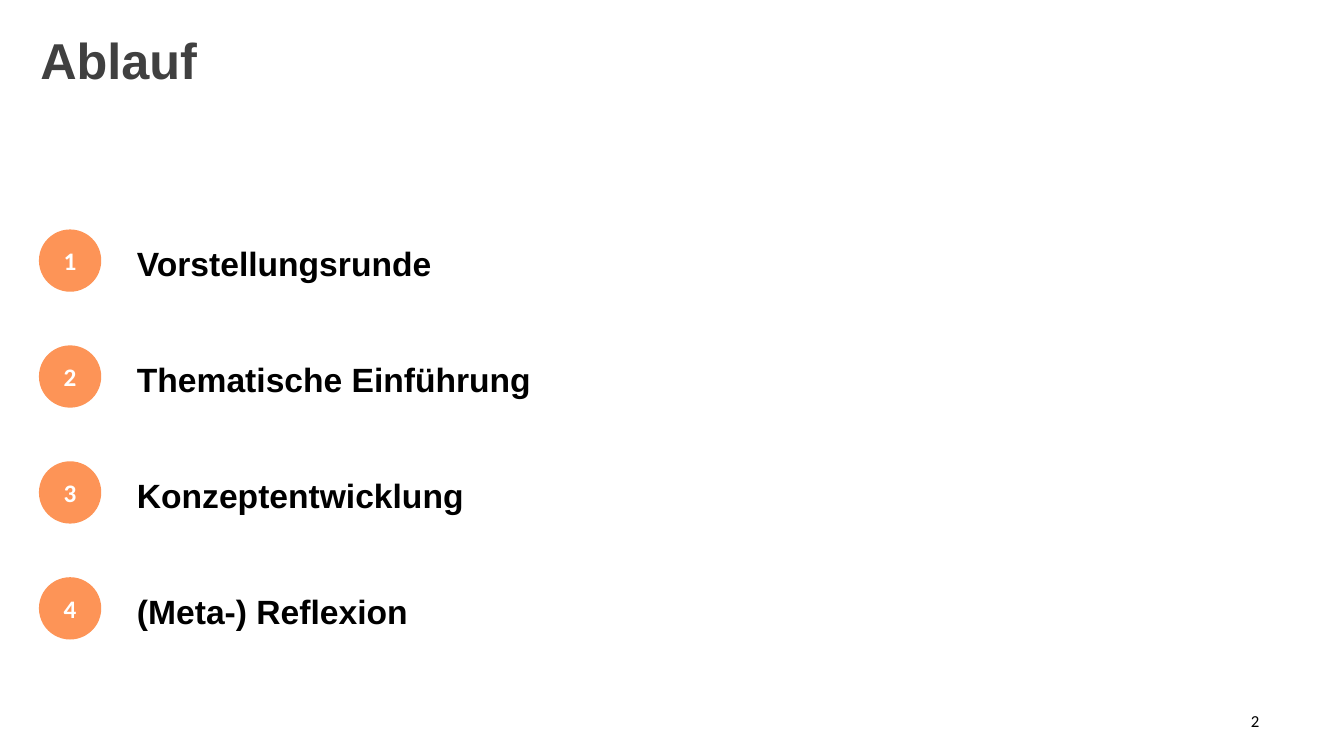
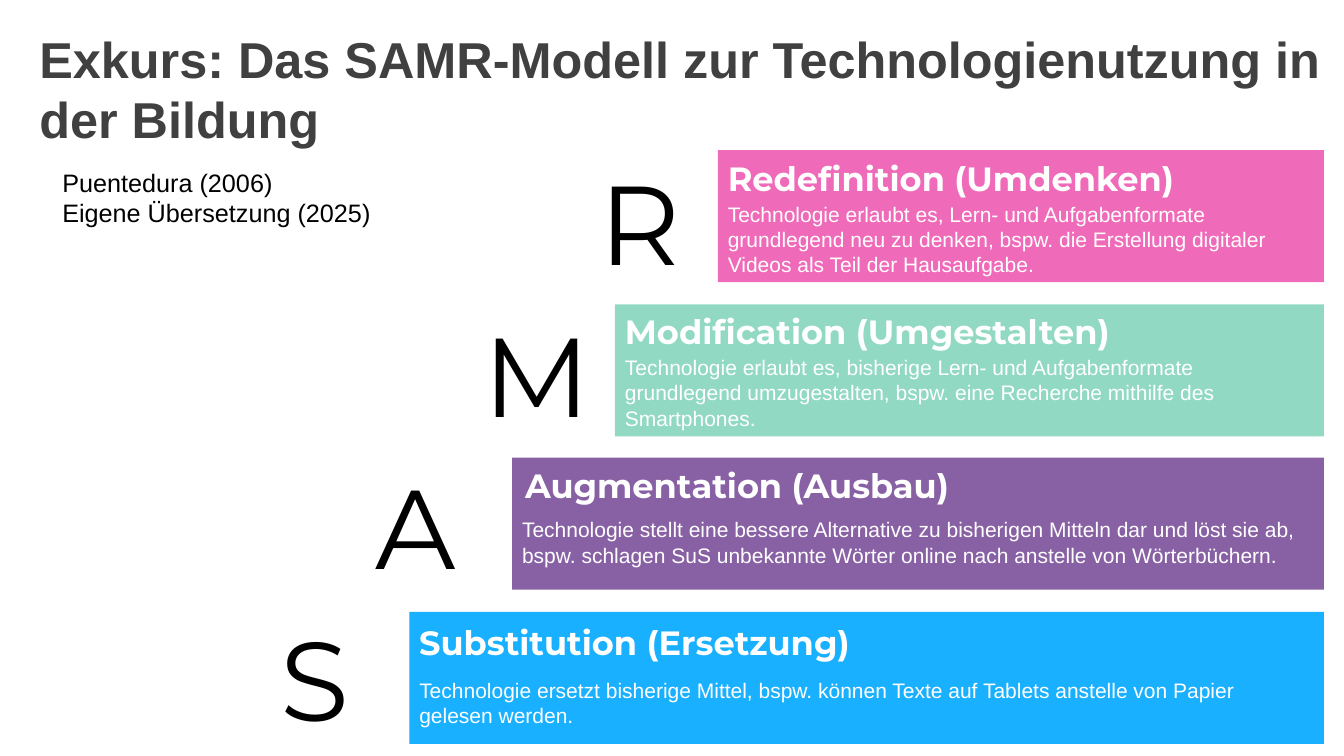
from pptx import Presentation
from pptx.dml.color import RGBColor
from pptx.enum.shapes import MSO_SHAPE
from pptx.enum.text import MSO_ANCHOR, MSO_AUTO_SIZE, PP_ALIGN
from pptx.util import Pt

PX = 9144  # 100 px to the inch
COLORS = {
    "title": "404040", "text": "000000", "white": "FFFFFF", "number": "FD9457",
    "redefinition": "EF6AB8", "modification": "91D9C2",
    "augmentation": "8861A4", "substitution": "18B0FF",
}


def write(shape, lines, size, font="Arial", color="text", bold=False,
          align=PP_ALIGN.LEFT, anchor=MSO_ANCHOR.TOP, spacing=1.0):
    """Fill a shape's text frame, one paragraph per line."""
    frame = shape.text_frame
    frame.word_wrap = True
    frame.auto_size = MSO_AUTO_SIZE.NONE
    frame.vertical_anchor = anchor
    for index, line in enumerate(lines):
        para = frame.add_paragraph() if index else frame.paragraphs[0]
        para.alignment = align
        para.line_spacing = spacing
        span = para.add_run()
        span.text = line
        span.font.size = Pt(size)
        span.font.name = font
        span.font.bold = bold
        span.font.color.rgb = RGBColor.from_string(COLORS[color])


def add_block(page, left, top, width, height, color=None, preset=MSO_SHAPE.RECTANGLE):
    """Add a filled shape, or a text box when no color is given."""
    place = [length * PX for length in (left, top, width, height)]
    if color is None:
        return page.shapes.add_textbox(*place)
    block = page.shapes.add_shape(preset, *place)
    block.shadow.inherit = False
    block.fill.solid()
    block.fill.fore_color.rgb = RGBColor.from_string(COLORS[color])
    block.line.fill.background()
    return block


deck = Presentation()
deck.slide_width, deck.slide_height = 1333 * PX, 750 * PX

pages = []
for text, left, top, width, spacing in (
    ("Ablauf", 30, 0, 1088, 0.9),
    ("Exkurs: Das SAMR-Modell zur Technologienutzung in der Bildung", 29, 25, 1315, 1.0),
):
    page = deck.slides.add_slide(deck.slide_layouts[5])
    title = page.shapes.title
    title.left, title.top = left * PX, top * PX
    title.width, title.height = width * PX, 125 * PX
    write(title, [text], 36, color="title", bold=True,
          anchor=MSO_ANCHOR.MIDDLE, spacing=spacing)
    pages.append(page)
agenda, model = pages

# Agenda
topics = ["Vorstellungsrunde", "Thematische Einführung",
          "Konzeptentwicklung", "(Meta-) Reflexion"]
for index, topic in enumerate(topics):
    top = 229 + 115 * index
    circle = add_block(agenda, 40, top, 59, 59, "number", MSO_SHAPE.OVAL)
    circle.line.color.rgb = RGBColor.from_string(COLORS["number"])
    circle.line.width = Pt(2)
    write(circle, [str(index + 1)], 18, "Calibri", "white", True,
          PP_ALIGN.CENTER, MSO_ANCHOR.MIDDLE)
    label = add_block(agenda, 126, top + 4, 935, 51)
    write(label, [topic], 24, bold=True, spacing=1.07)

page_number = add_block(agenda, 959, 695, 300, 40)
write(page_number, ["2"], 12, "Calibri", align=PP_ALIGN.RIGHT, anchor=MSO_ANCHOR.MIDDLE)

# SAMR staircase, from the top step down:
# letter, its left, color, heading, heading inset, heading top, body top, body
steps = [
    ("R", 585, "redefinition", "Redefinition (Umdenken)", 0, 152, 195,
     "Technologie erlaubt es, Lern- und Aufgabenformate grundlegend neu zu denken, "
     "bspw. die Erstellung digitaler Videos als Teil der Hausaufgabe."),
    ("M", 470, "modification", "Modification (Umgestalten)", 0, 304, 347,
     "Technologie erlaubt es, bisherige Lern- und Aufgabenformate grundlegend "
     "umzugestalten, bspw. eine Recherche mithilfe des Smartphones."),
    ("A", 363, "augmentation", "Augmentation (Ausbau)", 3, 456, 508,
     "Technologie stellt eine bessere Alternative zu bisherigen Mitteln dar und löst "
     "sie ab, bspw. schlagen SuS unbekannte Wörter online nach anstelle von Wörterbüchern."),
    ("S", 268, "substitution", "Substitution (Ersetzung)", 0, 612, 667,
     "Technologie ersetzt bisherige Mittel, bspw. können Texte auf Tablets anstelle "
     "von Papier gelesen werden."),
]
BAR_RIGHT = 1313
for index, step in enumerate(steps):
    letter, letter_left, color, heading, inset, heading_top, body_top, body = step
    left = 712 - 102 * index
    width = BAR_RIGHT - left
    add_block(model, left, 149 + round(152.67 * index), width, 131, color)
    write(add_block(model, left + inset, heading_top, 590, 50), [heading], 24,
          "Montserrat", "white", True)
    write(add_block(model, left, body_top, width - 12, 86), [body], 15, color="white")
    write(add_block(model, letter_left, 147 + 151 * index, 127, 145), [letter], 80,
          "Montserrat")

source = add_block(model, 52, 161, 343, 71)
write(source, ["Puentedura (2006)", "Eigene Übersetzung (2025)"], 18)

deck.save("out.pptx")
